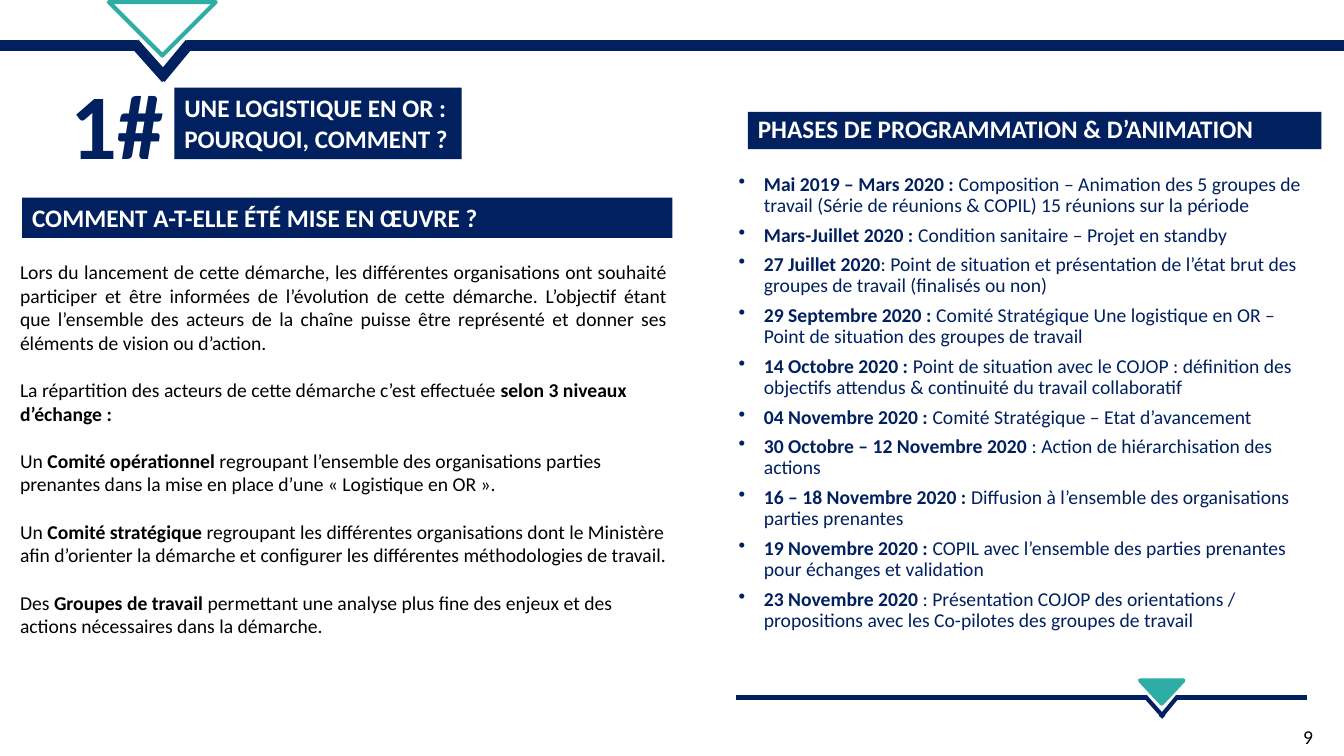
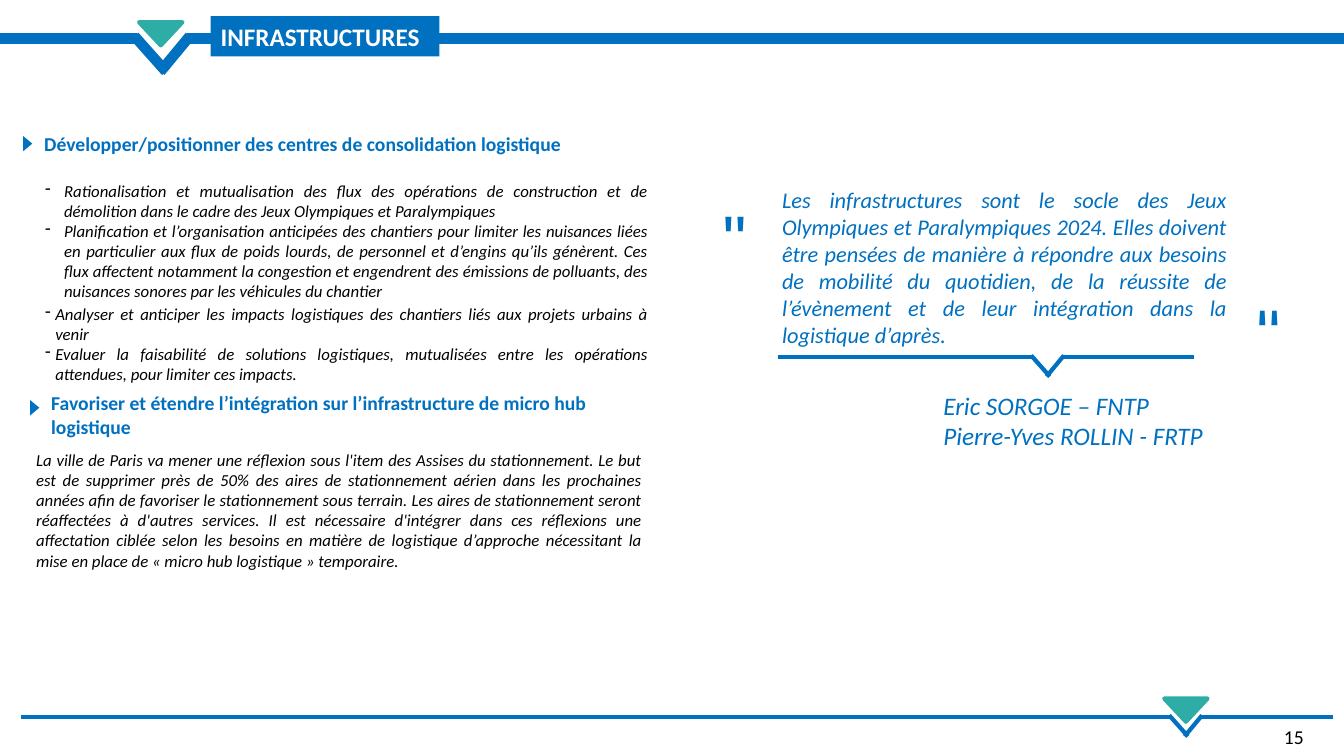
from lxml import etree
from pptx import Presentation
from pptx import util as u
from pptx.dml.color import RGBColor
from pptx.enum import shapes, text
from pptx.oxml.ns import qn

COLORS = {"navy": "002060", "blue": "0070C0", "teal": "2EACA6", "white": "FFFFFF", "black": "000000"}
COLUMNS, ROWS = 160, 90
CELL = u.Pt(6)  # grid cells are square
JUSTIFY = text.PP_ALIGN.JUSTIFY
THICK, THIN = (6.6, 7.5), (3.9, 3)  # notch width in columns, stroke in points

presentation = Presentation()
presentation.slide_width = COLUMNS * CELL
presentation.slide_height = ROWS * CELL
blank = presentation.slide_layouts[6]


def add_text(slide, box, paragraphs, size=14, color="black", bold=False, italic=False, font="Calibri",
             fill=None, align=None, before=0, after=0, spacing=None, bullet=None, hang=0, indent=0):
    """Add a text box on the grid; ** toggles bold inside a paragraph."""
    shape = slide.shapes.add_textbox(*(round(value * CELL) for value in box))
    if fill:
        shape.fill.solid()
        shape.fill.fore_color.rgb = RGBColor.from_string(COLORS[fill])
    frame = shape.text_frame
    frame.word_wrap = True
    for index, content in enumerate(paragraphs):
        paragraph = frame.paragraphs[0] if index == 0 else frame.add_paragraph()
        paragraph.alignment = align[index] if isinstance(align, list) else align
        if index and before:
            paragraph.space_before = u.Pt(before)
        if after:
            paragraph.space_after = u.Pt(after)
        if spacing:
            paragraph.line_spacing = spacing
        if bullet:
            properties = paragraph._p.get_or_add_pPr()
            properties.set("marL", str(round(indent * CELL)))
            properties.set("indent", str(round(-hang * CELL)))
            etree.SubElement(properties, qn("a:buChar")).set("char", bullet)
        for part, words in enumerate(content.split("**")):
            if not words:
                continue
            run = paragraph.add_run()
            run.text = words
            run.font.name = font
            run.font.size = u.Pt(size)
            run.font.bold = bold or part % 2 == 1
            run.font.italic = italic
            run.font.color.rgb = RGBColor.from_string(COLORS[color])
    return shape


def add_notched_line(slide, left, notch, right, row, weight, color):
    """Draw a horizontal rule broken by a V that starts at column notch."""
    width, stroke = weight
    top, tip = row - 0.04 * width, row + 0.6 * width
    strokes = [
        (left, row, notch + 0.05 * width, row),
        (notch, top, notch + 0.57 * width, tip),
        (notch + width, top, notch + 0.47 * width, tip),
        (notch + 0.95 * width, row, right, row),
    ]
    for ends in strokes:
        line = slide.shapes.add_connector(shapes.MSO_CONNECTOR.STRAIGHT, *(round(value * CELL) for value in ends))
        line.line.width = u.Pt(stroke)
        line.line.color.rgb = RGBColor.from_string(COLORS[color])
        etree.SubElement(line._element.spPr, qn("a:effectLst"))


# Bands, triangles and page numbers of both slides
# Triangle: left, top, width, height, rotation, fill, outline
pages = [
    {"color": "navy", "number": "9", "number_left": 153.96,
     "lines": [(0, 16, COLUMNS, 5.4, THICK), (87.6, 136.32, 155.64, 83.04, THIN)],
     "triangles": [(12.96, 0.24, 12.72, 6.36, 180, "white", "teal"),
                   (135.72, 81, 5.16, 2.76, 180, "teal", "teal")]},
    {"color": "blue", "number": "15", "number_left": 151.68,
     "lines": [(0, 16, COLUMNS, 4.56, THICK), (2.52, 139.2, 158.64, 85.32, THIN),
               (92.64, 122.76, 142.2, 42.48, THIN)],
     "triangles": [(16.56, 2.64, 5.16, 2.76, 180, "teal", "teal"),
                   (138.6, 83.16, 5.16, 2.76, 180, "teal", "teal"),
                   (2.4, 16.56, 1.8, 1.08, 90, "blue", None),
                   (3.24, 48, 1.8, 1.08, 90, "blue", None)]},
]
slides = []
for page in pages:
    slide = presentation.slides.add_slide(blank)
    slides.append(slide)
    for left, notch, right, row, weight in page["lines"]:
        add_notched_line(slide, left, notch, right, row, weight, page["color"])
    for *box, rotation, fill, outline in page["triangles"]:
        triangle = slide.shapes.add_shape(shapes.MSO_SHAPE.ISOSCELES_TRIANGLE,
                                          *(round(value * CELL) for value in box))
        triangle.shadow.inherit = False
        triangle.rotation = rotation
        triangle.fill.solid()
        triangle.fill.fore_color.rgb = RGBColor.from_string(COLORS[fill])
        if outline:
            triangle.line.color.rgb = RGBColor.from_string(COLORS[outline])
            triangle.line.width = u.Pt(3)
        else:
            triangle.line.fill.background()
    add_text(slide, (page["number_left"], 85.68, 158.04 - page["number_left"], 4.08), [page["number"]])

banner = {"size": 18, "color": "white", "bold": True}
approach, infrastructure = slides

# Slide 1: approach and phases
add_text(approach, (7.2, 7.44, 15.48, 14.52), ["1#"], size=66, color="navy", bold=True)
add_text(approach, (20.76, 10.44, 34.2, 8.52), ["UNE LOGISTIQUE EN OR :", "POURQUOI, COMMENT ?"],
         fill="navy", **banner)
add_text(approach, (2.64, 23.52, 77.4, 4.8), ["COMMENT A-T-ELLE ÉTÉ MISE EN ŒUVRE ?"], fill="navy", **banner)
phases_title = add_text(approach, (89.04, 13.32, 68.28, 4.44), ["PHASES DE PROGRAMMATION & D’ANIMATION"],
                        fill="navy", spacing=0.9, **banner)
phases_title.text_frame.vertical_anchor = text.MSO_ANCHOR.MIDDLE

add_text(approach, (1.2, 30.36, 79.44, 46.44), [
    "Lors du lancement de cette démarche, les différentes organisations ont souhaité participer et être "
    "informées de l’évolution de cette démarche. L’objectif étant que l’ensemble des acteurs de la chaîne "
    "puisse être représenté et donner ses éléments de vision ou d’action.",
    "La répartition des acteurs de cette démarche c’est effectuée **selon 3 niveaux d’échange :**",
    "Un **Comité opérationnel **regroupant l’ensemble des organisations parties prenantes dans la mise en "
    "place d’une « Logistique en OR ».",
    "Un **Comité stratégique **regroupant les différentes organisations dont le Ministère afin d’orienter "
    "la démarche et configurer les différentes méthodologies de travail.",
    "Des **Groupes de travail **permettant une analyse plus fine des enjeux et des actions nécessaires "
    "dans la démarche.",
], align=[JUSTIFY] + [None] * 4, before=17)

add_text(approach, (83.76, 20.16, 74.28, 57.72), [
    "**Mai 2019 – Mars 2020 :** Composition – Animation des 5 groupes de travail (Série de réunions & COPIL) "
    "15 réunions sur la période",
    "**Mars-Juillet 2020 : **Condition sanitaire – Projet en standby",
    "**27 Juillet 2020**: Point de situation et présentation de l’état brut des groupes de travail "
    "(finalisés ou non)",
    "**29 Septembre 2020 : **Comité Stratégique Une logistique en OR – Point de situation des groupes de travail",
    "**14 Octobre 2020 : **Point de situation avec le COJOP : définition des objectifs attendus & continuité "
    "du travail collaboratif",
    "**04 Novembre 2020 : **Comité Stratégique – Etat d’avancement",
    "**30 Octobre – 12 Novembre 2020 **: Action de hiérarchisation des actions",
    "**16 – 18 Novembre 2020 : **Diffusion à l’ensemble des organisations parties prenantes",
    "**19 Novembre 2020 : **COPIL avec l’ensemble des parties prenantes pour échanges et validation",
    "**23 Novembre 2020 **: Présentation COJOP des orientations / propositions avec les Co-pilotes des "
    "groupes de travail",
], color="navy", spacing=0.9, after=6, bullet="•", indent=6, hang=3)

# Slide 2: infrastructure
add_text(infrastructure, (25.08, 1.92, 27.24, 4.8), ["INFRASTRUCTURES"], fill="blue", **banner)
add_text(infrastructure, (4.08, 15.12, 88.08, 4.08),
         ["Développer/positionner des centres de consolidation logistique"], color="blue", bold=True)
add_text(infrastructure, (4.92, 45.96, 70.32, 6.84),
         ["Favoriser et étendre l’intégration sur l’infrastructure de micro hub logistique"],
         color="blue", bold=True)

detail = {"size": 12, "italic": True, "align": JUSTIFY}
add_text(infrastructure, (4.2, 20.88, 74.16, 15), [
    "Rationalisation et mutualisation des flux des opérations de construction et de démolition dans le cadre "
    "des Jeux Olympiques et Paralympiques",
    "Planification et l’organisation anticipées des chantiers pour limiter les nuisances liées en particulier "
    "aux flux de poids lourds, de personnel et d’engins qu’ils génèrent. Ces flux affectent notamment la "
    "congestion et engendrent des émissions de polluants, des nuisances sonores par les véhicules du chantier",
], bullet="-", indent=2.25, hang=2.25, **detail)
add_text(infrastructure, (4.2, 35.52, 74.16, 10.8), [
    "Analyser et anticiper les impacts logistiques des chantiers liés aux projets urbains à venir",
    "Evaluer la faisabilité de solutions logistiques, mutualisées entre les opérations attendues, pour limiter "
    "ces impacts.",
], bullet="-", indent=1.2, hang=1.2, **detail)
add_text(infrastructure, (3.12, 52.92, 74.52, 15.72), [
    "La ville de Paris va mener une réflexion sous l'item des Assises du stationnement. Le but est de supprimer "
    "près de 50% des aires de stationnement aérien dans les prochaines années afin de favoriser le stationnement "
    "sous terrain. Les aires de stationnement seront réaffectées à d'autres services. Il est nécessaire "
    "d'intégrer dans ces réflexions une affectation ciblée selon les besoins en matière de logistique "
    "d’approche nécessitant la mise en place de « micro hub logistique » temporaire.",
], **detail)

add_text(infrastructure, (91.92, 21.6, 55.32, 20.64), [
    "Les infrastructures sont le socle des Jeux Olympiques et Paralympiques 2024. Elles doivent être pensées de "
    "manière à répondre aux besoins de mobilité du quotidien, de la réussite de l’évènement et de leur "
    "intégration dans la logistique d’après.",
], size=16, color="blue", italic=True, align=JUSTIFY)
add_text(infrastructure, (111.12, 45.84, 33.72, 8.52), ["Eric SORGOE – FNTP", "Pierre-Yves ROLLIN - FRTP"],
         size=18, color="blue", italic=True)
for left, top, rotation in [(84.84, 22.8, 0), (143.16, 30.96, 180)]:
    quote_mark = add_text(infrastructure, (left, top, 10.44, 10.92), ['"'], size=48, color="blue", font="Arial")
    quote_mark.rotation = rotation

presentation.save("out.pptx")
